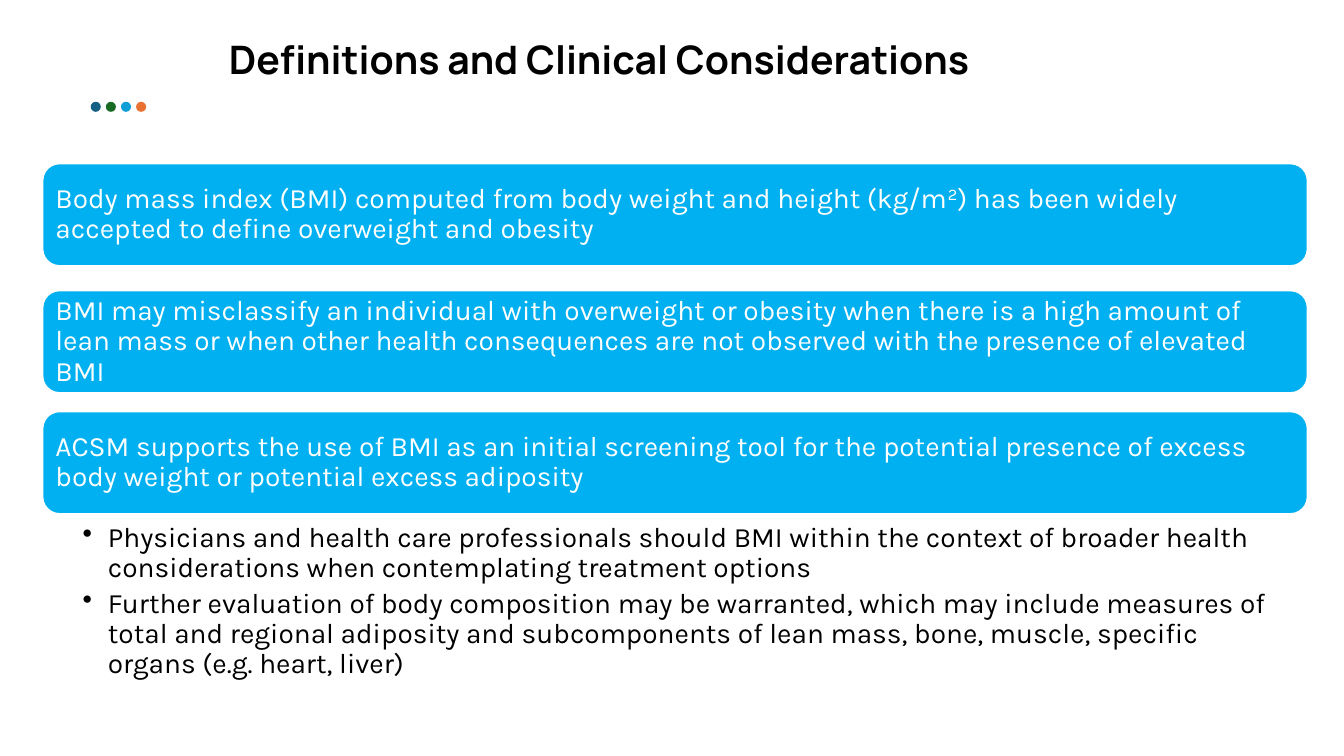
from lxml import etree
from pptx import Presentation
from pptx.dml.color import RGBColor
from pptx.enum.shapes import MSO_SHAPE
from pptx.enum.text import MSO_ANCHOR, MSO_AUTO_SIZE, PP_ALIGN
from pptx.oxml.ns import qn
from pptx.util import Emu, Pt

OVAL, ROUNDED = MSO_SHAPE.OVAL, MSO_SHAPE.ROUNDED_RECTANGLE
LEFT, CENTER = PP_ALIGN.LEFT, PP_ALIGN.CENTER
TOP, MIDDLE = MSO_ANCHOR.TOP, MSO_ANCHOR.MIDDLE
EMU_PER_PX = 9144
BLACK, WHITE, CARD_BLUE = "000000", "FFFFFF", "00B0F0"
DOT_COLORS = ["156082", "196B24", "0F9ED5", "E97132"]

TITLE = "Definitions and Clinical Considerations"
CARDS = [
    (162, [("Body mass index (BMI) computed from body weight and height (kg/m", False),
           ("2", True),
           (") has been widely accepted to define overweight and obesity", False)]),
    (288, [("BMI may misclassify an individual with overweight or obesity when there is "
            "a high amount of lean mass or when other health consequences are not "
            "observed with the presence of elevated BMI", False)]),
    (408, [("ACSM supports the use of BMI as an initial screening tool for the potential "
            "presence of excess body weight or potential excess adiposity", False)]),
]
BULLETS = [
    "Physicians and health care professionals should BMI within the context of broader "
    "health considerations when contemplating treatment options",
    "Further evaluation of body composition may be warranted, which may include measures "
    "of total and regional adiposity and subcomponents of lean mass, bone, muscle, "
    "specific organs (e.g. heart, liver)",
]


def px(n):
    """Turn a length in px into EMU."""
    return Emu(n * EMU_PER_PX)


def rgb(value):
    """Turn a hex string into a colour."""
    return RGBColor.from_string(value)


def add_shape(slide, kind, box, fill):
    """Add a filled preset shape without line or shadow."""
    sp = slide.shapes.add_shape(kind, *map(px, box))
    sp.shadow.inherit = False
    sp.fill.solid()
    sp.fill.fore_color.rgb = rgb(fill)
    sp.line.fill.background()
    return sp


def setup_frame(tf, insets, anchor):
    """Set wrapping, insets and anchor of a text frame."""
    tf.word_wrap = True
    tf.margin_left, tf.margin_top, tf.margin_right, tf.margin_bottom = map(px, insets)
    tf.vertical_anchor = anchor


def format_paragraph(p, align, after=0):
    """Set alignment and spacing of a paragraph."""
    p.alignment = align
    p.line_spacing = 0.9
    p.space_before = Pt(0)
    p.space_after = Pt(after)


def add_run(p, text, color, font="Karla", size=20, bold=False, superscript=False):
    """Add one formatted run to a paragraph."""
    r = p.add_run()
    r.text = text
    r.font.name = font
    r.font.size = Pt(size)
    r.font.bold = bold
    r.font.color.rgb = rgb(color)
    if superscript:
        r.font._element.set("baseline", "30000")


def set_bullet(p, indent):
    """Give a paragraph a hanging round bullet."""
    pPr = p._p.get_or_add_pPr()
    pPr.set("marL", str(px(indent)))
    pPr.set("indent", str(-px(indent)))
    etree.SubElement(pPr, qn("a:buChar")).set("char", "•")


def add_title(slide, box):
    """Add the centred slide title."""
    tf = slide.shapes.add_textbox(*map(px, box)).text_frame
    setup_frame(tf, (10, 5, 10, 5), TOP)
    tf.auto_size = MSO_AUTO_SIZE.SHAPE_TO_FIT_TEXT
    p = tf.paragraphs[0]
    format_paragraph(p, CENTER)
    add_run(p, TITLE, BLACK, font="Manrope", size=28, bold=True)


def add_dots(slide, box):
    """Add a row of coloured dots spread over the box."""
    x, y, w, size = box
    step = (w - size) // (len(DOT_COLORS) - 1)
    for i, color in enumerate(DOT_COLORS):
        add_shape(slide, OVAL, (x + i * step, y, size, size), color)


def add_card(slide, box, runs):
    """Add a rounded card with its statement."""
    sp = add_shape(slide, ROUNDED, box, CARD_BLUE)
    sp.line.color.rgb = rgb(WHITE)
    sp.line.width = Pt(1.5)
    setup_frame(sp.text_frame, (8, 8, 8, 8), MIDDLE)
    p = sp.text_frame.paragraphs[0]
    format_paragraph(p, LEFT, after=7)
    for text, superscript in runs:
        add_run(p, text, WHITE, superscript=superscript)


def add_bullets(slide, box):
    """Add the bulleted notes under the last card."""
    tf = slide.shapes.add_textbox(*map(px, box)).text_frame
    setup_frame(tf, (40, 3, 16, 3), TOP)
    for i, text in enumerate(BULLETS):
        p = tf.add_paragraph() if i else tf.paragraphs[0]
        set_bullet(p, 25)
        format_paragraph(p, LEFT, after=4)
        add_run(p, text, BLACK)


def main():
    """Build and save the slide."""
    prs = Presentation()
    prs.slide_width, prs.slide_height = px(1333), px(750)
    slide = prs.slides.add_slide(prs.slide_layouts[6])
    add_dots(slide, (90, 101, 55, 10))
    add_title(slide, (145, 35, 898, 53))
    for top, runs in CARDS:
        add_card(slide, (42, top, 1255, 102), runs)
    add_bullets(slide, (42, 516, 1255, 167))
    prs.save("out.pptx")


if __name__ == "__main__":
    main()
